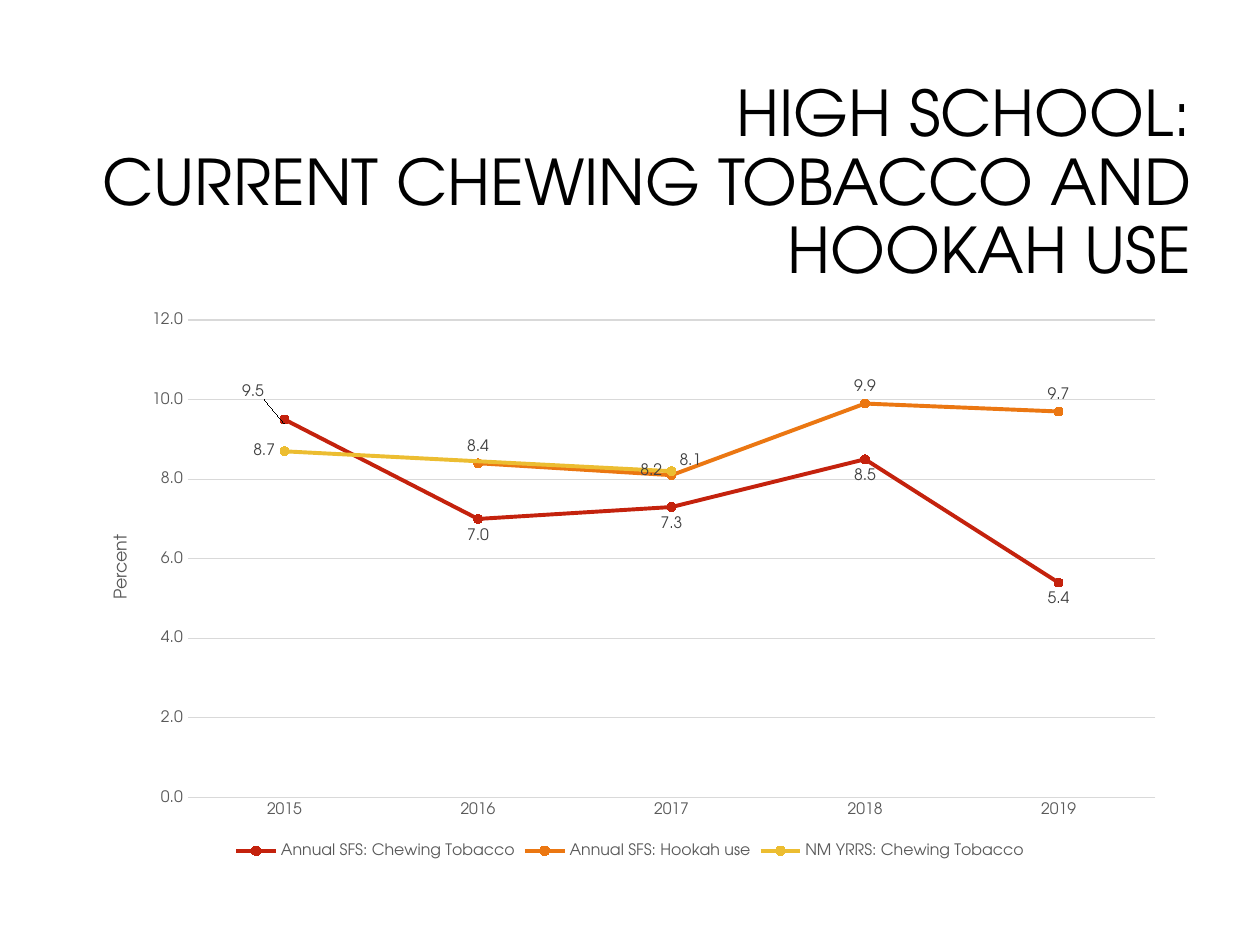
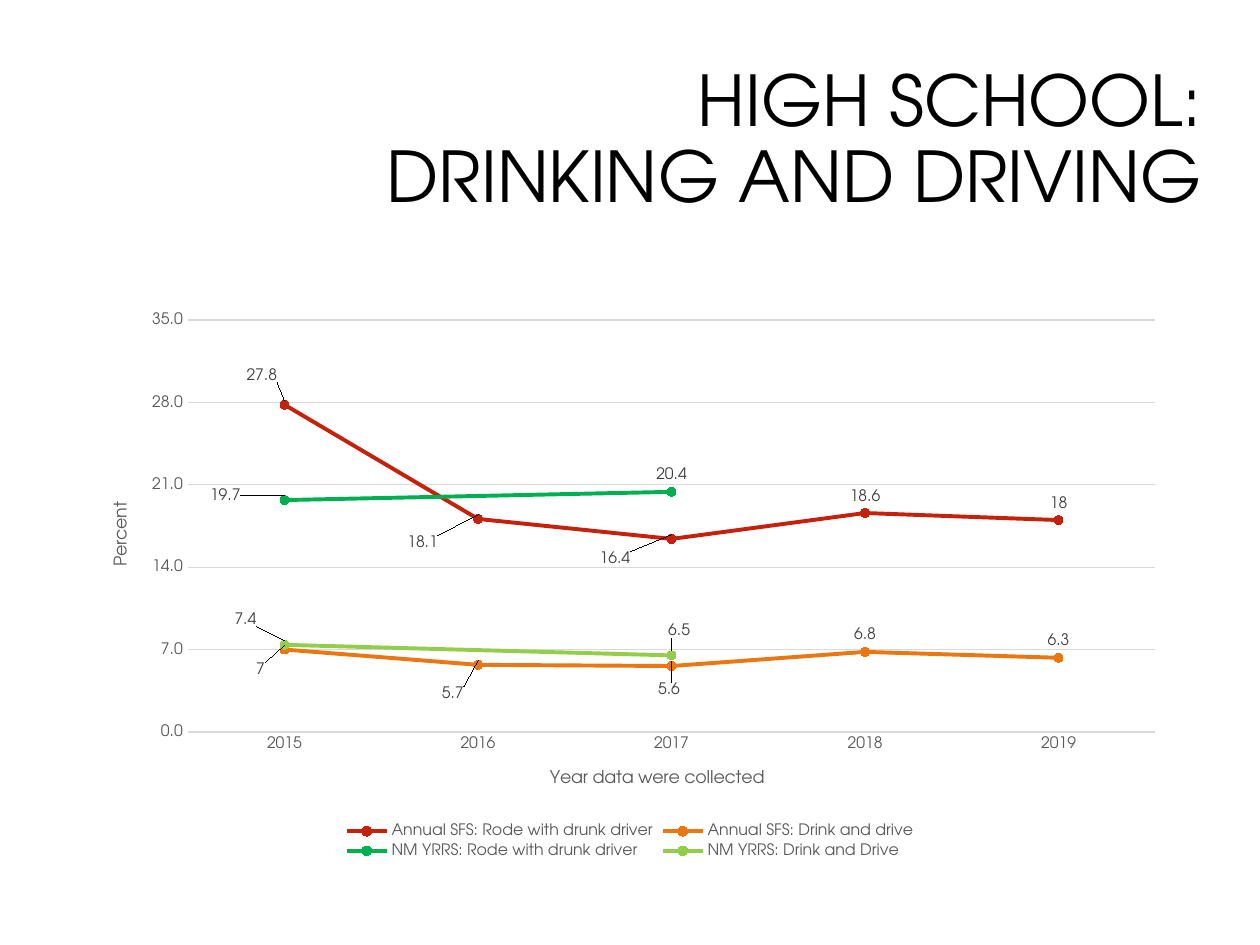
"""Build two slides of high school survey line charts."""
from dataclasses import dataclass, field
from typing import Optional

from lxml import etree
from pptx import Presentation, util as u
from pptx.chart.data import CategoryChartData
from pptx.dml.color import RGBColor
from pptx.enum import chart as ch, text
from pptx.oxml import ns

FONT = "TeX Gyre Adventor"
BLACK, LABEL, GREY, GRID = "000000", "404040", "595959", "D9D9D9"
RED, ORANGE, YELLOW = "C4220D", "EB7712", "ECBD31"
GREEN, LIME = "00B050", "92CE4A"
YEARS = ["2015", "2016", "2017", "2018", "2019"]
CHART_LEFT, CHART_TOP, CHART_W, CHART_H = 0.65, 2.4, 8.7, 4.45
PLOT_LEFT, PLOT_TOP, PLOT_W = 0.84, 0.14, 7.68
ABOVE, BELOW, LEFT = (ch.XL_LABEL_POSITION.ABOVE, ch.XL_LABEL_POSITION.BELOW,
                      ch.XL_LABEL_POSITION.LEFT)


@dataclass
class TitleLine:
    """A title line and its right indent in inches."""
    text: str
    indent: float = 0


@dataclass
class Title:
    """A right-aligned title and its box in inches."""
    lines: list[TitleLine]
    box: tuple[float, float, float, float]
    size: int


@dataclass
class Series:
    """A charted line; shifts move single labels, in inches."""
    name: str
    values: list[Optional[float]]
    color: str
    position: ch.XL_LABEL_POSITION = ABOVE
    shifts: dict[int, tuple[float, float]] = field(default_factory=dict)


@dataclass
class Survey:
    """One slide with its title and chart; places are inches in the chart."""
    title: Title
    series: list[Series]
    top_value: float
    step: float
    plot_height: float
    percent_at: tuple[float, float]
    number_format: str = "General"
    year_title: str = ""
    year_at: tuple[float, float] = (0, 0)


SURVEYS = [
    Survey(
        Title([TitleLine("HIGH SCHOOL:", 0.28),
               TitleLine("CURRENT CHEWING TOBACCO AND HOOKAH USE")],
              (0.65, 0.84, 9.18, 1.25), 36),
        [Series("Annual SFS: Chewing Tobacco", [9.5, 7, 7.3, 8.5, 5.4], RED,
                BELOW, {0: (-0.25, -0.35)}),
         Series("Annual SFS: Hookah use", [None, 8.4, 8.1, 9.9, 9.7], ORANGE,
                ABOVE, {2: (0.15, 0.02)}),
         Series("NM YRRS: Chewing Tobacco", [8.7, None, 8.2, None, None],
                YELLOW, LEFT)],
        12, 2, 3.79, (0.21, 1.82), "0.0"),
    Survey(
        Title([TitleLine("HIGH SCHOOL:", 0.16),
               TitleLine("DRINKING AND DRIVING", 0.16)],
              (2.83, 0.42, 6.97, 1.41), 40),
        [Series("Annual SFS: Rode with drunk driver",
                [27.8, 18.1, 16.4, 18.6, 18], RED,
                shifts={0: (-0.18, -0.1), 1: (-0.44, 0.32), 2: (-0.45, 0.29)}),
         Series("Annual SFS: Drink and drive", [7, 5.7, 5.6, 6.8, 6.3], ORANGE,
                shifts={0: (-0.19, 0.29), 1: (-0.2, 0.36), 2: (-0.02, 0.32)}),
         Series("NM YRRS: Rode with drunk driver",
                [19.7, None, 20.4, None, None], GREEN,
                shifts={0: (-0.47, 0.1)}),
         Series("NM YRRS: Drink and Drive", [7.4, None, 6.5, None, None], LIME,
                shifts={0: (-0.31, -0.07), 2: (0.06, -0.06)})],
        35, 7, 3.27, (0.21, 1.56),
        year_title="Year data were collected", year_at=(3.69, 3.67)),
]


def rgb(value: str) -> RGBColor:
    """Turn a hex string into a colour."""
    return RGBColor.from_string(value)


def style(font, size: float, color: str) -> None:
    """Set typeface, size and colour of a font."""
    font.name, font.size, font.bold = FONT, u.Pt(size), False
    font.color.rgb = rgb(color)


def write(p, content: str, *, size: float, color: str = BLACK,
          indent: float = 0, align=None, spacing: Optional[float] = None) -> None:
    """Write a formatted run into a paragraph."""
    r = p.add_run()
    r.text = content
    style(r.font, size, color)
    p.alignment, p.line_spacing = align, spacing
    if indent:
        p._p.get_or_add_pPr().set("marR", str(u.Inches(indent)))


def set_line(line, color: str, width: float) -> None:
    """Set colour and width of a line."""
    line.color.rgb, line.width = rgb(color), u.Pt(width)


def place(parent, index: int, x: float, y: float,
          size: Optional[tuple[float, float]] = None, edge: bool = True) -> None:
    """Give a chart part a manual layout, measured in inches."""
    for old in parent.findall(ns.qn("c:layout")):
        parent.remove(old)
    layout = etree.Element(ns.qn("c:layout"))
    manual = etree.SubElement(layout, ns.qn("c:manualLayout"))
    items = [("layoutTarget", "inner")] if size else []
    if edge:
        items += [("xMode", "edge"), ("yMode", "edge")]
    items += [("x", x / CHART_W), ("y", y / CHART_H)]
    if size:
        items += [("w", size[0] / CHART_W), ("h", size[1] / CHART_H)]
    for tag, value in items:
        etree.SubElement(manual, ns.qn(f"c:{tag}")).set("val", str(value))
    parent.insert(index, layout)


def add_title(slide, title: Title) -> None:
    """Draw the slide title."""
    tf = slide.shapes.add_textbox(*map(u.Inches, title.box)).text_frame
    tf.word_wrap, tf.vertical_anchor = True, text.MSO_ANCHOR.MIDDLE
    for i, line in enumerate(title.lines):
        p = tf.add_paragraph() if i else tf.paragraphs[0]
        write(p, line.text, size=title.size, indent=line.indent,
              align=text.PP_ALIGN.RIGHT, spacing=0.9)


def title_axis(axis, content: str, at: tuple[float, float],
               rotation: int = 0) -> None:
    """Write an axis title at a fixed place."""
    title = axis.axis_title
    tf = title.text_frame
    write(tf.paragraphs[0], content, size=10, color=GREY)
    tf._txBody.find(ns.qn("a:bodyPr")).set("rot", str(rotation * 60000))
    place(title._element, 1, *at)


def format_axes(chart, survey: Survey) -> None:
    """Format both axes and the gridlines."""
    years, percent = chart.category_axis, chart.value_axis
    for axis in (years, percent):
        style(axis.tick_labels.font, 9, GREY)
        axis.major_tick_mark = axis.minor_tick_mark = ch.XL_TICK_MARK.NONE
    set_line(years.format.line, GRID, 0.75)
    percent.format.line.fill.background()
    set_line(percent.major_gridlines.format.line, GRID, 0.75)
    percent.minimum_scale, percent.maximum_scale = 0, survey.top_value
    percent.major_unit = survey.step
    percent.tick_labels.number_format = "#,##0.0"
    percent.tick_labels.number_format_is_linked = False
    title_axis(percent, "Percent", survey.percent_at, -90)
    if survey.year_title:
        title_axis(years, survey.year_title, survey.year_at)


def format_series(plotted, series: Series, number_format: str) -> None:
    """Format a line, its markers and its labels."""
    plotted.smooth = False
    set_line(plotted.format.line, series.color, 2.25)
    marker = plotted.marker
    marker.style, marker.size = ch.XL_MARKER_STYLE.CIRCLE, 5
    marker.format.fill.solid()
    marker.format.fill.fore_color.rgb = rgb(series.color)
    set_line(marker.format.line, series.color, 0.75)
    labels = plotted.data_labels
    labels.show_value, labels.position = True, series.position
    labels.number_format, labels.number_format_is_linked = number_format, False
    style(labels.font, 9, LABEL)
    for i, (x, y) in series.shifts.items():
        label = plotted.points[i].data_label
        style(label.font, 9, LABEL)
        label.position = series.position
        dlbl = labels._element.xpath(f"c:dLbl[c:idx/@val='{i}']")[0]
        place(dlbl, 1, x, y, edge=False)


def add_survey_chart(slide, survey: Survey) -> None:
    """Draw the line chart of a survey."""
    data = CategoryChartData(number_format=survey.number_format)
    data.categories = YEARS
    for series in survey.series:
        data.add_series(series.name, series.values)
    box = map(u.Inches, (CHART_LEFT, CHART_TOP, CHART_W, CHART_H))
    chart = slide.shapes.add_chart(
        ch.XL_CHART_TYPE.LINE_MARKERS, *box, data).chart
    style(chart.font, 10, BLACK)
    chart.has_title = False
    chart.has_legend = True
    chart.legend.position = ch.XL_LEGEND_POSITION.BOTTOM
    chart.legend.include_in_layout = False
    style(chart.legend.font, 9, GREY)
    plot = chart.plots[0]
    plot.vary_by_categories = False
    format_axes(chart, survey)
    for plotted, series in zip(plot.series, survey.series):
        format_series(plotted, series, survey.number_format)
    root = chart._chartSpace
    place(root.xpath(".//c:plotArea")[0], 0, PLOT_LEFT, PLOT_TOP,
          (PLOT_W, survey.plot_height))
    root.xpath(".//c:dispBlanksAs")[0].set("val", "span")


def main() -> None:
    """Build and save the presentation."""
    prs = Presentation()
    prs.slide_width, prs.slide_height = u.Inches(10), u.Inches(7.5)
    for survey in SURVEYS:
        slide = prs.slides.add_slide(prs.slide_layouts[6])
        add_title(slide, survey.title)
        add_survey_chart(slide, survey)
    prs.save("out.pptx")


if __name__ == "__main__":
    main()
